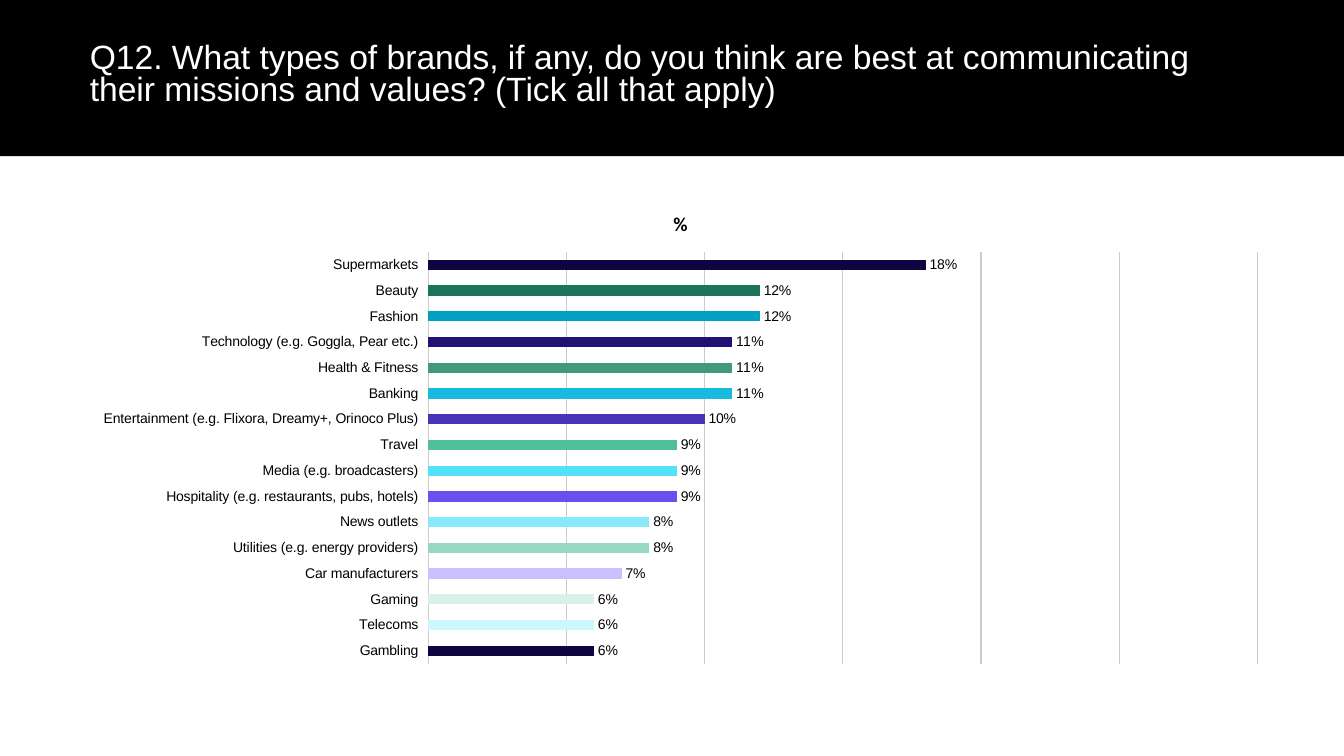
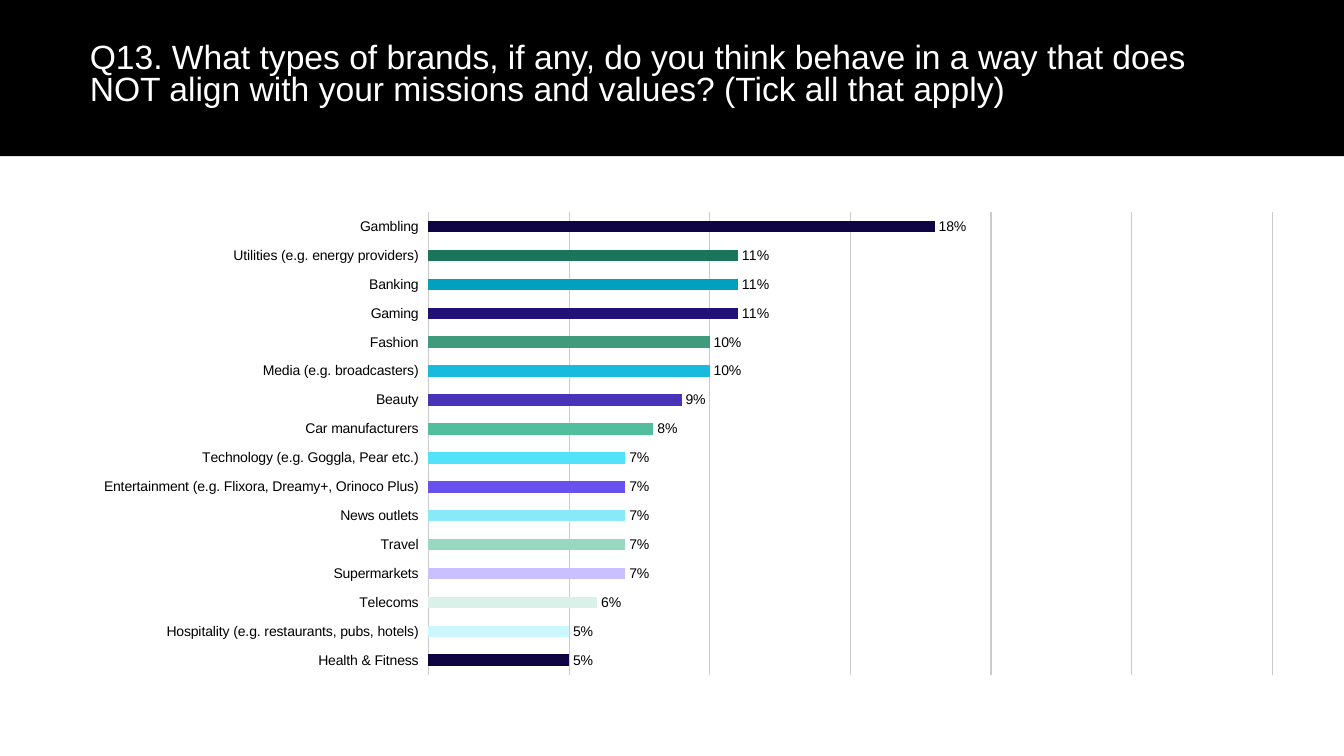
"""Build two survey slides, each with a question band and a ranked bar chart."""
from pptx import Presentation
from pptx.chart.data import CategoryChartData
from pptx.dml.color import RGBColor
from pptx.enum.chart import XL_CHART_TYPE, XL_LABEL_POSITION, XL_TICK_LABEL_POSITION, XL_TICK_MARK
from pptx.enum.shapes import MSO_SHAPE
from pptx.enum.text import MSO_ANCHOR, MSO_AUTO_SIZE, PP_ALIGN
from pptx.util import Inches, Pt

BARS = XL_CHART_TYPE.BAR_CLUSTERED
OUTER = XL_LABEL_POSITION.OUTSIDE_END
LOW = XL_TICK_LABEL_POSITION.LOW
NO_TICK = XL_TICK_MARK.NONE
RECT = MSO_SHAPE.RECTANGLE
MIDDLE = MSO_ANCHOR.MIDDLE
FIXED = MSO_AUTO_SIZE.NONE
LEFT = PP_ALIGN.LEFT

BLACK = RGBColor(0x00, 0x00, 0x00)
WHITE = RGBColor(0xFF, 0xFF, 0xFF)
GRID = RGBColor(0xCC, 0xCC, 0xCC)
HUES = [RGBColor.from_string(code) for code in (
    "0F0542", "CCF7FF", "D9F1E8", "CBC0FF", "96D8C0", "88E9F9", "6951EF", "52E2FA",
    "51BE9C", "4933B9", "18BBDD", "409A7C", "211176", "00A0BE", "1B755A", "0F0542")]

FACE = "Arial"
WIDE, HIGH = Inches(13.33), Inches(7.5)
EDGE = Inches(0.79)

TECH = "Technology (e.g. Goggla, Pear etc.)"
SHOWS = "Entertainment (e.g. Flixora, Dreamy+, Orinoco Plus)"
MEDIA = "Media (e.g. broadcasters)"
HOTELS = "Hospitality (e.g. restaurants, pubs, hotels)"
POWER = "Utilities (e.g. energy providers)"
CARS = "Car manufacturers"
NEWS = "News outlets"
HEALTH = "Health & Fitness"

PAGES = [
    {
        "ask": "Q12. What types of brands, if any, do you think are best at communicating "
               "their missions and values? (Tick all that apply)",
        "name": "%", "head": True, "top": 1.9, "width": 11.92,
        "rows": [("Gambling", 0.06), ("Telecoms", 0.06), ("Gaming", 0.06), (CARS, 0.07),
                 (POWER, 0.08), (NEWS, 0.08), (HOTELS, 0.09), (MEDIA, 0.09),
                 ("Travel", 0.09), (SHOWS, 0.1), ("Banking", 0.11), (HEALTH, 0.11),
                 (TECH, 0.11), ("Fashion", 0.12), ("Beauty", 0.12), ("Supermarkets", 0.18)],
    },
    {
        "ask": "Q13. What types of brands, if any, do you think behave in a way that does "
               "NOT align with your missions and values? (Tick all that apply)",
        "name": "Series 1", "head": False, "top": 2.01, "width": 12.07,
        "rows": [(HEALTH, 0.05), (HOTELS, 0.05), ("Telecoms", 0.06), ("Supermarkets", 0.07),
                 ("Travel", 0.07), (NEWS, 0.07), (SHOWS, 0.07), (TECH, 0.07),
                 (CARS, 0.08), ("Beauty", 0.09), (MEDIA, 0.1), ("Fashion", 0.1),
                 ("Gaming", 0.11), ("Banking", 0.11), (POWER, 0.11), ("Gambling", 0.18)],
    },
]


def style(font, size, color=BLACK, face=FACE):
    font.name, font.size = face, Pt(size)
    font.color.rgb = color


deck = Presentation()
deck.slide_width, deck.slide_height = WIDE, HIGH
base = deck.slide_layouts[5]
slot = base.placeholders[0]
slot.left, slot.top = EDGE, Inches(0.35)
slot.width, slot.height = Inches(11.48), Inches(0.8)
slides = [deck.slides.add_slide(base) for page in PAGES]

band = slides[0].shapes.add_shape(RECT, 0, 0, WIDE, Inches(1.55))
band.shadow.inherit = False
band.fill.solid()
band.fill.fore_color.rgb = BLACK
band.line.fill.background()
band.element.nvSpPr.cNvPr.set("id", "20")
base.shapes.element.insert(2, band.element)

for slide, page in zip(slides, PAGES):
    frame = slide.shapes.title.text_frame
    frame.text = page["ask"]
    frame.word_wrap = True
    frame.auto_size = FIXED
    frame.vertical_anchor = MIDDLE
    para = frame.paragraphs[0]
    para.alignment = LEFT
    para.line_spacing = 0.8
    style(para.font, 24, WHITE)

    data = CategoryChartData(number_format="0%")
    data.categories = [label for label, share in page["rows"]]
    data.add_series(page["name"], [share for label, share in page["rows"]])
    chart = slide.shapes.add_chart(BARS, EDGE, Inches(page["top"]), Inches(page["width"]),
                                   Inches(4.78), data).chart
    style(chart.font, 12, face="Calibri")
    chart.has_legend = False
    chart.has_title = page["head"]
    if page["head"]:
        chart.chart_title.text_frame.text = page["name"]
        head = chart.chart_title.text_frame.paragraphs[0].font
        style(head, 14, face="Calibri")
        head.bold = True

    cats = chart.category_axis
    cats.tick_label_position = LOW
    cats.major_tick_mark = NO_TICK
    cats.format.line.fill.background()
    style(cats.tick_labels.font, 10)

    scale = chart.value_axis
    scale.visible = False
    scale.minimum_scale, scale.maximum_scale = 0, 0.3
    scale.major_unit = 0.05
    scale.has_major_gridlines = True
    rule = scale.major_gridlines.format.line
    rule.color.rgb = GRID
    rule.width = Pt(0.75)

    plot = chart.plots[0]
    plot.gap_width = 150
    plot.vary_by_categories = False
    plot.has_data_labels = True
    tags = plot.data_labels
    tags.show_value = True
    tags.number_format, tags.number_format_is_linked = "0%", False
    tags.position = OUTER
    style(tags.font, 10)
    for spot, hue in enumerate(HUES):
        fill = plot.series[0].points[spot].format.fill
        fill.solid()
        fill.fore_color.rgb = hue

deck.save("out.pptx")
